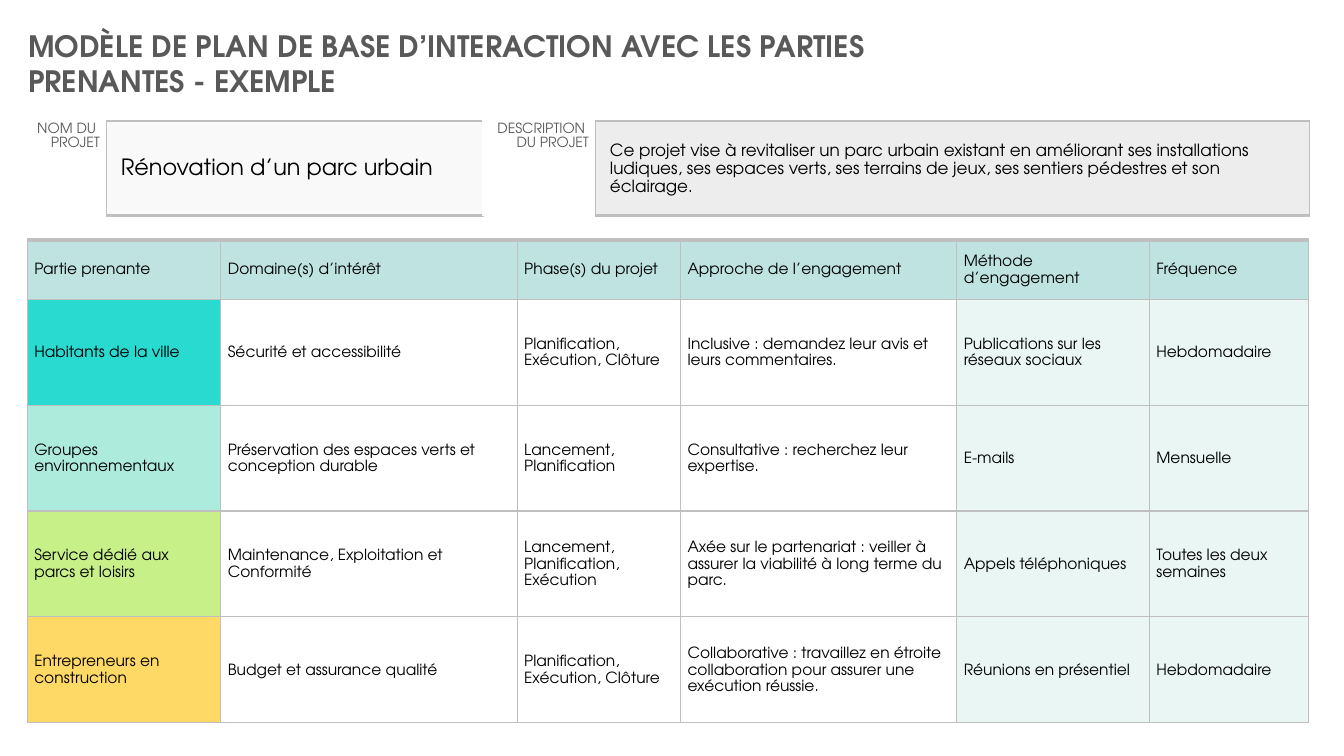
from lxml.etree import SubElement
from pptx import Presentation
from pptx.dml.color import RGBColor
from pptx.enum.text import MSO_ANCHOR as Anchor, MSO_AUTO_SIZE as AutoSize, PP_ALIGN as Align
from pptx.oxml.ns import qn
from pptx.util import Pt

PX = 9144  # EMU in one px, 100 px to the inch
FONT = "TeX Gyre Adventor"
GREY, BLACK, WHITE = "595959", "000000", "FFFFFF"
BORDER, HEADER, PALE_TEAL = "BFBFBF", "BEE3E0", "E9F6F4"
TITLE_ONLY = 5

COLUMN_WIDTHS = [192, 294, 162, 274, 191, 158]
HEADINGS = ["Partie prenante", "Domaine(s) d’intérêt", "Phase(s) du projet",
            "Approche de l’engagement", "Méthode d’engagement", "Fréquence"]
STAKEHOLDERS = [
    ("28DACF", ["Habitants de la ville", "Sécurité et accessibilité",
                "Planification, Exécution, Clôture",
                "Inclusive : demandez leur avis et leurs commentaires.",
                "Publications sur les réseaux sociaux", "Hebdomadaire"]),
    ("ADEBDC", ["Groupes environnementaux",
                "Préservation des espaces verts et conception durable",
                "Lancement, Planification",
                "Consultative : recherchez leur expertise.",
                "E-mails", "Mensuelle"]),
    ("C8F088", ["Service dédié aux parcs et loisirs",
                "Maintenance, Exploitation et Conformité",
                "Lancement, Planification, Exécution",
                "Axée sur le partenariat : veiller à assurer la viabilité à long terme du parc.",
                "Appels téléphoniques", "Toutes les deux semaines"]),
    ("FFD966", ["Entrepreneurs en construction", "Budget et assurance qualité",
                "Planification, Exécution, Clôture",
                "Collaborative : travaillez en étroite collaboration pour assurer une exécution réussie.",
                "Réunions en présentiel", "Hebdomadaire"]),
]


def color(hex_string):
    return RGBColor.from_string(hex_string)


def write(frame, text, size=11, ink=BLACK, bold=False, align=Align.LEFT,
          spacing=None, indent=0):
    paragraph = frame.paragraphs[0]
    paragraph.text = text
    paragraph.alignment = align
    if spacing:
        paragraph.line_spacing = spacing
    if indent:
        properties = paragraph._p.get_or_add_pPr()
        properties.set("marL", str(indent * PX))
        properties.set("indent", "0")
    for line_break in paragraph._p.findall(qn("a:br")):
        SubElement(line_break, qn("a:rPr")).set("sz", str(size * 100))
    for run in paragraph.runs:
        run.font.name = FONT
        run.font.size = Pt(size)
        run.font.bold = bold
        run.font.color.rgb = color(ink)


def add_borders(cell, top=1, bottom=1):
    """Draw the four cell borders, with widths in points."""
    properties = cell._tc.get_or_add_tcPr()
    for side, width in (("L", 1), ("R", 1), ("T", top), ("B", bottom)):
        line = SubElement(properties, qn(f"a:ln{side}"), w=str(Pt(width)))
        fill = SubElement(line, qn("a:solidFill"))
        SubElement(fill, qn("a:srgbClr"), val=BORDER)


def format_cell(cell, text, fill=None, anchor=Anchor.MIDDLE, top=1, bottom=1, **text_format):
    cell.margin_left = cell.margin_right = 7 * PX
    cell.margin_top = cell.margin_bottom = 0
    cell.vertical_anchor = anchor
    write(cell.text_frame, text, spacing=1.15, **text_format)
    if fill:
        add_borders(cell, top, bottom)
        cell.fill.solid()
        cell.fill.fore_color.rgb = color(fill)
    else:
        cell.fill.background()


def add_plain_table(slide, left, top, widths, heights):
    frame = slide.shapes.add_table(len(heights), len(widths), left * PX, top * PX,
                                   sum(widths) * PX, sum(heights) * PX)
    table = frame.table
    table.first_row = table.horz_banding = False
    for column, width in zip(table.columns, widths):
        column.width = width * PX
    for row, height in zip(table.rows, heights):
        row.height = height * PX
    return table


def add_project_field(slide, left, widths, label, value, fill, size):
    table = add_plain_table(slide, left, 120, widths, [94])
    format_cell(table.cell(0, 0), label, anchor=Anchor.TOP, size=10, ink=GREY,
                align=Align.RIGHT)
    format_cell(table.cell(0, 1), value, fill, bottom=2.25, size=size, indent=7)


def add_stakeholder_table(slide):
    table = add_plain_table(slide, 27, 238, COLUMN_WIDTHS, [59] + [105] * len(STAKEHOLDERS))
    for column, heading in enumerate(HEADINGS):
        format_cell(table.cell(0, column), heading, HEADER, top=3)
    for row, (accent, texts) in enumerate(STAKEHOLDERS, start=1):
        fills = [accent] + [WHITE] * 3 + [PALE_TEAL] * 2
        for column, (text, fill) in enumerate(zip(texts, fills)):
            format_cell(table.cell(row, column), text, fill)


def add_title(slide, text):
    title = slide.shapes.title
    title.left, title.top, title.width, title.height = (n * PX for n in (18, 23, 990, 81))
    frame = title.text_frame
    frame.word_wrap = True
    frame.auto_size = AutoSize.NONE
    frame.vertical_anchor = Anchor.TOP
    write(frame, text, size=21, ink=GREY, bold=True)


def main():
    presentation = Presentation()
    presentation.slide_width, presentation.slide_height = 1333 * PX, 750 * PX
    slide = presentation.slides.add_slide(presentation.slide_layouts[TITLE_ONLY])
    add_title(slide, "MODÈLE DE PLAN DE BASE D’INTERACTION AVEC LES PARTIES PRENANTES - EXEMPLE")
    add_project_field(slide, 18, [88, 373], "NOM DU \nPROJET",
                      "Rénovation d’un parc urbain", "F9F9F9", 16)
    add_project_field(slide, 479, [112, 708], "DESCRIPTION \nDU PROJET",
                      "Ce projet vise à revitaliser un parc urbain existant en améliorant ses "
                      "installations ludiques, ses espaces verts, ses terrains de jeux, ses "
                      "sentiers pédestres et son éclairage.", "EDEDED", 12)
    add_stakeholder_table(slide)
    presentation.save("out.pptx")


if __name__ == "__main__":
    main()
